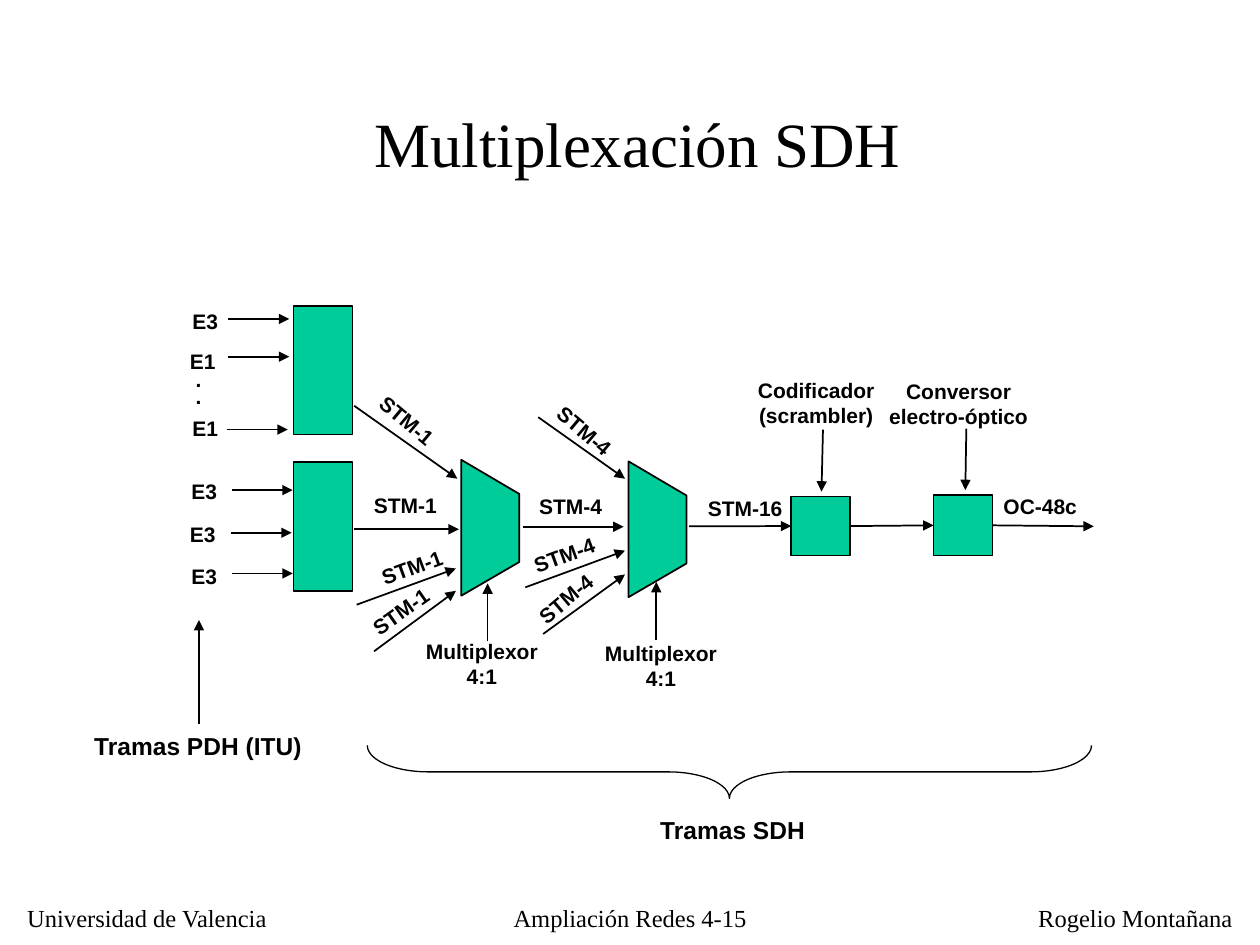
from dataclasses import dataclass
from typing import Optional

from lxml.etree import SubElement
from pptx import Presentation
from pptx.dml.color import RGBColor
from pptx.enum.shapes import MSO_CONNECTOR, MSO_SHAPE
from pptx.enum.text import MSO_ANCHOR, PP_ALIGN
from pptx.oxml.ns import qn
from pptx.util import Cm, Pt

GREEN, BLACK = "00CC99", "000000"
TOP, LEFT, BOTTOM, RIGHT = range(4)


@dataclass
class Label:
    text: str
    x: float
    y: float
    w: float
    h: float = 0.76
    turn: float = 0
    size: float = 12
    font: str = "Arial"
    bold: bool = True
    wrap: bool = False
    space: Optional[float] = None


@dataclass
class Arrow:
    x1: float
    y1: float
    x2: float
    y2: float
    width: float = 1
    start: Optional[str] = None
    end: Optional[str] = None


@dataclass
class Box:
    name: str
    x: float
    y: float
    w: float
    h: float


def color(code: str) -> RGBColor:
    return RGBColor.from_string(code)


def paint(shape, fill: Optional[str] = GREEN, width: float = 1) -> None:
    shape.shadow.inherit = False
    if fill:
        shape.fill.solid()
        shape.fill.fore_color.rgb = color(fill)
    else:
        shape.fill.background()
    shape.line.color.rgb = color(BLACK)
    shape.line.width = Pt(width)


def write(shape, label: Label) -> None:
    """Place the label in a text box or placeholder and format it."""
    shape.left, shape.top = Cm(label.x), Cm(label.y)
    shape.width, shape.height = Cm(label.w), Cm(label.h)
    shape.rotation = label.turn
    frame = shape.text_frame
    frame.text = label.text
    frame.word_wrap = label.wrap
    frame.vertical_anchor = MSO_ANCHOR.TOP
    for para in frame.paragraphs:
        para.alignment = PP_ALIGN.CENTER if label.wrap else PP_ALIGN.LEFT
        if label.space:
            para.line_spacing = label.space
        for run in para.runs:
            run.font.name = label.font
            run.font.size = Pt(label.size)
            run.font.bold = label.bold
            run.font.color.rgb = color(BLACK)


def add_label(slide, label: Label) -> None:
    write(slide.shapes.add_textbox(0, 0, 0, 0), label)


def add_box(slide, box: Box):
    shape = slide.shapes.add_shape(
        MSO_SHAPE.RECTANGLE, Cm(box.x), Cm(box.y), Cm(box.w), Cm(box.h))
    paint(shape)
    return shape


def add_mux(slide, x: float, y: float) -> None:
    """Draw a multiplexer whose wide side faces left."""
    build = slide.shapes.build_freeform(Cm(x), Cm(y))
    corners = [(1.17, 0.69), (1.17, 2.06), (0, 2.74)]
    build.add_line_segments([(Cm(x + dx), Cm(y + dy)) for dx, dy in corners])
    paint(build.convert_to_shape())


def add_arrow(slide, arrow: Arrow, boxes: dict) -> None:
    line = slide.shapes.add_connector(
        MSO_CONNECTOR.STRAIGHT, Cm(arrow.x1), Cm(arrow.y1),
        Cm(arrow.x2), Cm(arrow.y2))
    if arrow.start:
        line.begin_connect(boxes[arrow.start], RIGHT)
    if arrow.end:
        line.end_connect(boxes[arrow.end], LEFT)
    line.line.color.rgb = color(BLACK)
    line.line.width = Pt(arrow.width)
    props = line._element.spPr
    SubElement(props.find(qn("a:ln")), qn("a:tailEnd"), type="triangle")
    SubElement(props, qn("a:effectLst"))


def add_brace(slide) -> None:
    brace = slide.shapes.add_shape(
        MSO_SHAPE.LEFT_BRACE, Cm(14.17), Cm(8.26), Cm(1.07), Cm(14.6))
    brace.adjustments[0], brace.adjustments[1] = 1.15, 0.5
    brace.rotation = 270
    paint(brace, None, 0.75)


SERIF = {"font": "Times New Roman", "bold": False}
TITLE = Label("Multiplexación SDH", 7.29, 1.98, 11.13, 1.78, size=36, **SERIF)
BOXES = [
    Box("upper", 5.92, 6.17, 1.19, 2.59),
    Box("lower", 5.92, 9.32, 1.19, 2.59),
    Box("coder", 15.95, 10.01, 1.19, 1.19),
    Box("optic", 18.82, 9.98, 1.19, 1.22),
]
INPUTS = [(4.6, 6.43), (4.6, 7.19), (4.57, 8.66),
          (4.67, 9.88), (4.65, 10.74), (4.67, 11.56)]
ARROWS = [Arrow(x, y, x + 1.23, y) for x, y in INPUTS] + [
    Arrow(7.14, 8.18, 9.22, 9.65),
    Arrow(7.14, 10.67, 9.25, 10.67),
    Arrow(7.19, 12.19, 9.19, 11.46),
    Arrow(7.54, 13.13, 9.19, 11.91),
    Arrow(10.85, 8.41, 12.6, 9.65),
    Arrow(10.54, 10.62, 12.57, 10.62),
    Arrow(10.59, 11.84, 12.6, 11.1),
    Arrow(10.95, 12.78, 12.6, 11.58),
    Arrow(13.89, 10.61, 15.95, 10.61, end="coder"),
    Arrow(17.14, 10.61, 18.82, 10.59, start="coder", end="optic"),
    Arrow(20.01, 10.59, 22.05, 10.61, start="optic"),
    Arrow(16.59, 8.66, 16.56, 9.91),
    Arrow(19.48, 8.64, 19.46, 9.88),
    Arrow(9.83, 12.93, 9.83, 11.76),
    Arrow(13.23, 12.9, 13.23, 11.73),
    Arrow(4.01, 14.6, 4.01, 12.5, width=0.75),
]
FLOWS = [
    ("STM-1", 7.32, 8.1, 40), ("STM-1", 7.29, 9.8, 0),
    ("STM-1", 7.42, 11.05, 340), ("STM-1", 7.19, 11.94, 325),
    ("STM-4", 10.9, 8.31, 40), ("STM-4", 10.62, 9.83, 0),
    ("STM-4", 10.49, 10.8, 340), ("STM-4", 10.52, 11.68, 320),
]
LABELS = [Label(text, x, y, 1.78, turn=turn) for text, x, y, turn in FLOWS] + [
    Label("E3", 3.63, 6.1, 1.02),
    Label("E1\n .\n .", 3.58, 7.04, 1.02, 1.32, space=0.7),
    Label("E1", 3.63, 8.26, 1.02),
    Label("E3", 3.61, 9.53, 1.02),
    Label("E3", 3.58, 10.39, 1.02),
    Label("E3", 3.61, 11.23, 1.02),
    Label("STM-16", 14.02, 9.86, 2.1),
    Label("OC-48c", 19.98, 9.83, 2.2),
    Label("Codificador (scrambler)", 14.55, 7.48, 3.81, 1.27, wrap=True),
    Label("Conversor electro-óptico", 17.42, 7.51, 3.81, 1.27, wrap=True),
    Label("Multiplexor 4:1", 8.23, 12.75, 2.97, 1.27, wrap=True),
    Label("Multiplexor 4:1", 11.84, 12.78, 2.97, 1.27, wrap=True),
    Label("Tramas PDH (ITU)", 1.65, 14.61, 4.7, 0.84, size=14),
    Label("Tramas SDH", 13.06, 16.31, 3.45, 0.84, size=14),
    Label("Universidad de Valencia", 0.3, 18.08, 5.41, 0.84, size=14, **SERIF),
    Label("Ampliación Redes 4-15", 9.91, 18.08, 5.59, 0.79, size=14,
          wrap=True, **SERIF),
    Label("Rogelio Montañana", 20.68, 18.08, 4.42, 0.84, size=14, **SERIF),
]


def main() -> None:
    deck = Presentation()
    deck.slide_width, deck.slide_height = Cm(25.4), Cm(19.05)
    slide = deck.slides.add_slide(deck.slide_layouts[5])
    write(slide.shapes.title, TITLE)
    boxes = {box.name: add_box(slide, box) for box in BOXES}
    for x, y in [(9.3, 9.27), (12.67, 9.3)]:
        add_mux(slide, x, y)
    for arrow in ARROWS:
        add_arrow(slide, arrow, boxes)
    add_brace(slide)
    for label in LABELS:
        add_label(slide, label)
    deck.save("out.pptx")


if __name__ == "__main__":
    main()
